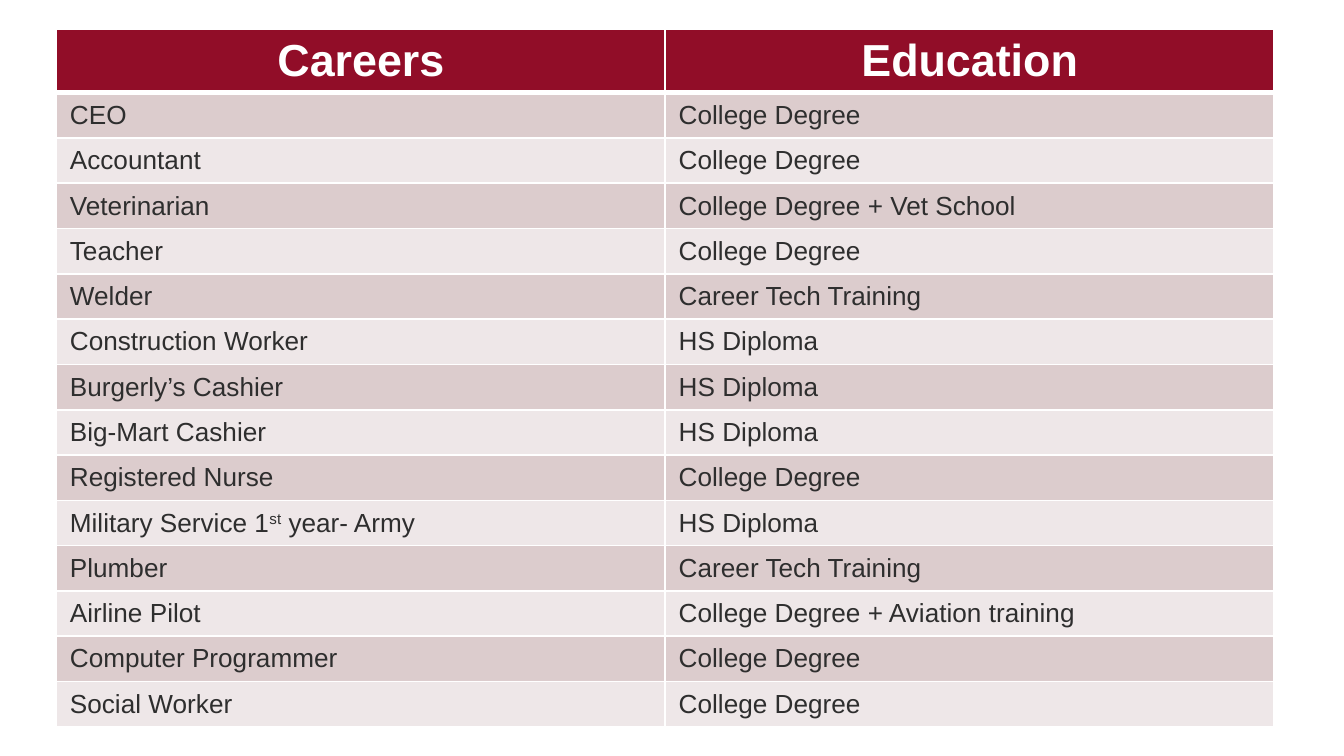
from lxml import etree
from pptx import Presentation
from pptx.dml.color import RGBColor
from pptx.enum.text import MSO_ANCHOR, PP_ALIGN
from pptx.oxml.ns import qn
from pptx.util import Inches, Pt

LEFT, CENTER = PP_ALIGN.LEFT, PP_ALIGN.CENTER
MIDDLE = MSO_ANCHOR.MIDDLE
WHITE = RGBColor(0xFF, 0xFF, 0xFF)
CRIMSON = RGBColor(0x91, 0x0D, 0x28)
CHARCOAL = RGBColor(0x2E, 0x2E, 0x2E)
ROSE = RGBColor(0xDC, 0xCC, 0xCD)
BLUSH = RGBColor(0xEE, 0xE7, 0xE8)

HEADER_FONT = {"name": "Arial", "size": Pt(24), "bold": True}
BODY_FONT = {"name": "Arial", "size": Pt(14), "bold": False}
CELL_FORMAT = {"margin_left": Inches(0.1), "margin_right": Inches(0.1),
               "margin_top": Inches(0.04), "margin_bottom": Inches(0.04),
               "vertical_anchor": MIDDLE}

COLLEGE, TECH, DIPLOMA = "College Degree", "Career Tech Training", "HS Diploma"
# A tuple holds runs; every second run is superscript
ROWS = [
    ("Careers", "Education"),
    ("CEO", COLLEGE),
    ("Accountant", COLLEGE),
    ("Veterinarian", COLLEGE + " + Vet School"),
    ("Teacher", COLLEGE),
    ("Welder", TECH),
    ("Construction Worker", DIPLOMA),
    ("Burgerly’s Cashier", DIPLOMA),
    ("Big-Mart Cashier", DIPLOMA),
    ("Registered Nurse", COLLEGE),
    (("Military Service 1", "st", " year- Army"), DIPLOMA),
    ("Plumber", TECH),
    ("Airline Pilot", COLLEGE + " + Aviation training"),
    ("Computer Programmer", COLLEGE),
    ("Social Worker", COLLEGE),
]


def set_border(cell, side, width):
    tcPr = cell._tc.get_or_add_tcPr()
    ln = etree.SubElement(tcPr, qn("a:" + side), w=str(Pt(width)))
    fill = etree.SubElement(ln, qn("a:solidFill"))
    etree.SubElement(fill, qn("a:srgbClr"), val=str(WHITE))


# Slide in 16:9
prs = Presentation()
prs.slide_width = Inches(10)
prs.slide_height = prs.slide_width * 9 // 16
s = prs.slides.add_slide(prs.slide_layouts[6])

# Table grid: taller header, equal body rows
width, height, header_height = Inches(9.06), Inches(5.19), Inches(0.47)
table = s.shapes.add_table(len(ROWS), 2, Inches(0.42), Inches(0.22),
                           width, height).table
for column in table.columns:
    column.width = width // 2
for i, row in enumerate(table.rows):
    row.height = (height - header_height) // (len(ROWS) - 1) if i else header_height

# Cells
for i, texts in enumerate(ROWS):
    header = i == 0
    font = HEADER_FONT if header else BODY_FONT
    color = WHITE if header else CHARCOAL
    band = CRIMSON if header else (BLUSH, ROSE)[i % 2]
    for j, text in enumerate(texts):
        cell = table.cell(i, j)
        for name, value in CELL_FORMAT.items():
            setattr(cell, name, value)
        for side in ("lnL", "lnR", "lnT", "lnB"):
            thick = (header and side == "lnB") or (i == 1 and side == "lnT")
            set_border(cell, side, 3 if thick else 1)
        cell.fill.solid()
        cell.fill.fore_color.rgb = band

        p = cell.text_frame.paragraphs[0]
        p.alignment = CENTER if header else LEFT
        for k, part in enumerate((text,) if isinstance(text, str) else text):
            r = p.add_run()
            r.text = part
            for name, value in font.items():
                setattr(r.font, name, value)
            r.font.color.rgb = color
            if k % 2:
                r._r.get_or_add_rPr().set("baseline", "30000")

prs.save("out.pptx")
